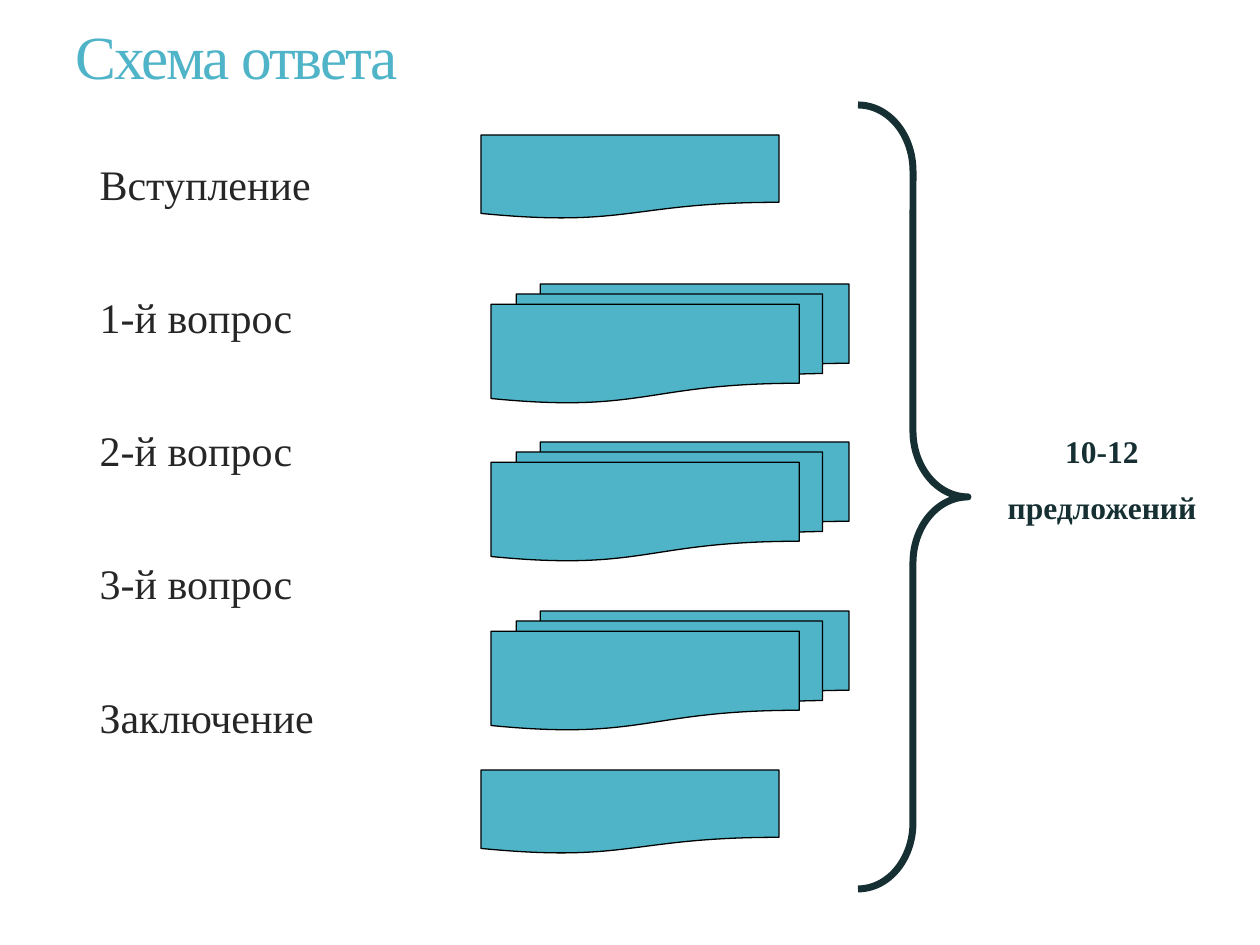
from pptx import Presentation
from pptx.dml.color import RGBColor
from pptx.enum.shapes import MSO_SHAPE
from pptx.enum.text import MSO_ANCHOR, MSO_AUTO_SIZE, PP_ALIGN
from pptx.util import Pt
from lxml import etree

DOCUMENT = MSO_SHAPE.FLOWCHART_DOCUMENT
MULTIDOCUMENT = MSO_SHAPE.FLOWCHART_MULTIDOCUMENT
BRACE = MSO_SHAPE.RIGHT_BRACE
LEFT, CENTER = PP_ALIGN.LEFT, PP_ALIGN.CENTER
TOP, MIDDLE = MSO_ANCHOR.TOP, MSO_ANCHOR.MIDDLE
NO_FIT = MSO_AUTO_SIZE.NONE

FONT = "Times New Roman"
COLORS = {"accent": "50B4C8", "dark": "162F33", "text": "262626", "outline": "000000"}
SCALE = 914400 / 126
A_NS = "http://schemas.openxmlformats.org/drawingml/2006/main"


def px(value):
    return round(value * SCALE)


def rgb(name):
    return RGBColor.from_string(COLORS[name])


def write(tf, lines, size, color, bold=False, align=LEFT, anchor=TOP,
          line_spacing=1.0, gap=0, indent=None, tracking=0):
    tf.word_wrap = True
    tf.auto_size = NO_FIT
    tf.vertical_anchor = anchor
    for i, line in enumerate(lines):
        p = tf.paragraphs[0] if i == 0 else tf.add_paragraph()
        p.alignment = align
        p.line_spacing = line_spacing
        p.space_before = Pt(gap if i else 0)
        p.space_after = Pt(0)
        if indent is not None:
            pPr = p._p.get_or_add_pPr()
            pPr.set("marL", str(px(indent)))
            pPr.set("indent", "0")
            etree.SubElement(pPr, f"{{{A_NS}}}buNone")
        r = p.add_run()
        r.text = line
        r.font.name = FONT
        r.font.size = Pt(size)
        r.font.bold = bold
        r.font.color.rgb = rgb(color)
        if tracking:
            r.font._element.set("spc", str(tracking))


class SlideBuilder:
    def __init__(self, prs):
        self.slide = prs.slides.add_slide(prs.slide_layouts[1])

    def placeholder(self, idx, box, lines, **style):
        sp = self.slide.placeholders[idx]
        sp.left, sp.top, sp.width, sp.height = map(px, box)
        write(sp.text_frame, lines, **style)

    def label(self, box, lines, **style):
        sp = self.slide.shapes.add_textbox(*map(px, box))
        write(sp.text_frame, lines, **style)

    def shape(self, kind, box, line, width, fill=None):
        sp = self.slide.shapes.add_shape(kind, *map(px, box))
        sp.shadow.inherit = False
        if fill:
            sp.fill.solid()
            sp.fill.fore_color.rgb = rgb(fill)
        else:
            sp.fill.background()
        sp.line.color.rgb = rgb(line)
        sp.line.width = Pt(width)
        return sp

    def card(self, kind, box):
        self.shape(kind, box, line="outline", width=0.75, fill="accent")

    def brace(self, box, curve):
        sp = self.shape(BRACE, box, line="dark", width=4)
        sp.adjustments[0] = curve
        sp.adjustments[1] = 0.5


def main():
    prs = Presentation()
    prs.slide_width, prs.slide_height = px(1260), px(945)
    s = SlideBuilder(prs)

    s.placeholder(0, (63, 16, 1040, 88), ["Схема ответа"], size=35,
                  color="accent", anchor=MIDDLE, line_spacing=0.9, tracking=-120)
    s.placeholder(1, (74, 160, 387, 712),
                  ["Вступление", "1-й вопрос", "2-й вопрос", "3-й вопрос", "Заключение"],
                  size=24, color="text", line_spacing=0.85, gap=51.6, indent=13)

    for top in (611, 442, 284):
        s.card(MULTIDOCUMENT, (491, top, 358, 119))
    for top in (135, 770):
        s.card(DOCUMENT, (481, top, 298, 84))

    s.label((978, 426, 248, 107), ["10-12", "предложений"], size=18,
            color="dark", bold=True, align=CENTER, gap=10)
    s.brace((858, 105, 110, 784), curve=0.6)

    prs.save("out.pptx")


if __name__ == "__main__":
    main()
